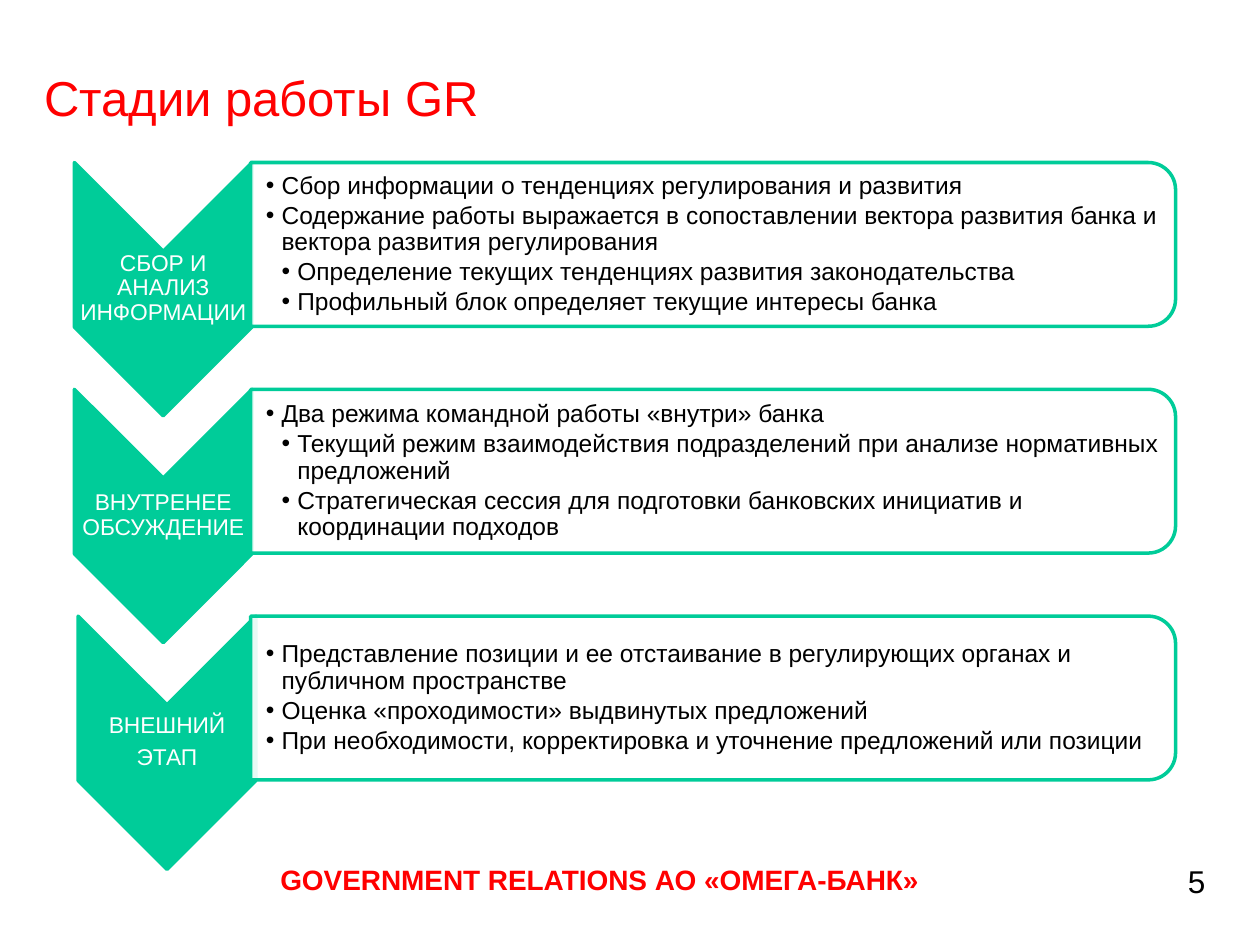
"""Build the slide on the stages of government relations work."""
from dataclasses import dataclass

import lxml.etree
import pptx
import pptx.dml.color
import pptx.enum.shapes
import pptx.enum.text
import pptx.oxml.ns
import pptx.util

Inches = pptx.util.Inches
Align = pptx.enum.text.PP_ALIGN
Anchor = pptx.enum.text.MSO_ANCHOR
Preset = pptx.enum.shapes.MSO_SHAPE


@dataclass(frozen=True)
class Theme:
    """Colours, font and type sizes of the slide."""

    font: str = "Arial"
    accent: str = "00CC99"
    heading: str = "FF0000"
    ink: str = "000000"
    paper: str = "FFFFFF"
    title_size: int = 28
    number_size: int = 18
    footer_size: int = 16
    list_size: int = 14
    label_size: int = 13


@dataclass(frozen=True)
class Item:
    """One list entry with its outline level."""

    text: str
    level: int = 1


@dataclass(frozen=True)
class Stage:
    """One stage: chevron label, list entries and chevron offset."""

    label: tuple[str, ...]
    items: tuple[Item, ...]
    shift: float = 0


THEME = Theme()
FIRST_TOP, STAGE_PITCH = 1.29, 1.8
CHEVRON_LEFT, CHEVRON_WIDTH, CHEVRON_HEIGHT = 0.59, 1.41, 2.01
PANEL_LEFT, PANEL_WIDTH, PANEL_HEIGHT = 1.99, 7.34, 1.3
INDENT = 0.125

STAGES = (
    Stage(
        ("СБОР И АНАЛИЗ ИНФОРМАЦИИ",),
        (
            Item("Сбор информации о тенденциях регулирования и развития"),
            Item("Содержание работы выражается в сопоставлении вектора развития банка и вектора развития регулирования"),
            Item("Определение текущих тенденциях развития законодательства", 2),
            Item("Профильный блок определяет текущие интересы банка", 2),
        ),
    ),
    Stage(
        ("ВНУТРЕНЕЕ ОБСУЖДЕНИЕ",),
        (
            Item("Два режима командной работы «внутри» банка"),
            Item("Текущий режим взаимодействия подразделений при анализе нормативных предложений", 2),
            Item("Стратегическая сессия для подготовки банковских инициатив и координации подходов", 2),
        ),
    ),
    Stage(
        ("ВНЕШНИЙ", "ЭТАП"),
        (
            Item("Представление позиции и ее отстаивание в регулирующих органах и публичном пространстве"),
            Item("Оценка «проходимости» выдвинутых предложений"),
            Item("При необходимости, корректировка и уточнение предложений или позиции"),
        ),
        shift=0.03,
    ),
)


def rgb(value: str) -> pptx.dml.color.RGBColor:
    """Turn a hex string into a colour."""
    return pptx.dml.color.RGBColor.from_string(value)


def set_bullet(para, level: int, colour: str) -> None:
    """Give a paragraph a hanging bullet, or none at level zero."""
    props = para._p.get_or_add_pPr()
    props.set("marL", str(Inches(INDENT * level)))
    props.set("indent", str(-Inches(INDENT) if level else 0))
    name = pptx.oxml.ns.qn
    if not level:
        lxml.etree.SubElement(props, name("a:buNone"))
        return
    para.level = level
    tint = lxml.etree.SubElement(props, name("a:buClr"))
    lxml.etree.SubElement(tint, name("a:srgbClr"), val=colour)
    lxml.etree.SubElement(props, name("a:buFont"), typeface=THEME.font)
    lxml.etree.SubElement(props, name("a:buChar"), char="•")


def write(box, items, *, size: int, colour: str, bold: bool = False,
          align=Align.LEFT, anchor=Anchor.MIDDLE, spacing: float = 0.9,
          after: float = 0, insets=(0.01, 0.01, 0.01, 0.01), wrap: bool = True) -> None:
    """Fill a box with formatted paragraphs."""
    frame = box.text_frame
    frame.auto_size = pptx.enum.text.MSO_AUTO_SIZE.NONE
    frame.word_wrap = wrap
    frame.vertical_anchor = anchor
    (frame.margin_left, frame.margin_top,
     frame.margin_right, frame.margin_bottom) = map(Inches, insets)
    for index, item in enumerate(items):
        para = frame.add_paragraph() if index else frame.paragraphs[0]
        para.alignment = align
        para.line_spacing = spacing
        para.space_before = pptx.util.Pt(0)
        para.space_after = pptx.util.Pt(after)
        set_bullet(para, item.level, colour)
        span = para.add_run()
        span.text = item.text
        span.font.name = THEME.font
        span.font.size = pptx.util.Pt(size)
        span.font.bold = bold
        span.font.color.rgb = rgb(colour)


def place(box, left: float, top: float, width: float, height: float) -> None:
    """Move a placeholder and bring it to the front."""
    box.left, box.top, box.width, box.height = map(Inches, (left, top, width, height))
    box.element.getparent().append(box.element)


def add_turned(page, preset, left: float, top: float, width: float,
               height: float, fill: str):
    """Add a shape turned a quarter, given its visible bounds."""
    shape = page.shapes.add_shape(
        preset, Inches(left + (width - height) / 2),
        Inches(top + (height - width) / 2), Inches(height), Inches(width))
    shape.rotation = 90
    shape.shadow.inherit = False
    shape.fill.solid()
    shape.fill.fore_color.rgb = rgb(fill)
    shape.line.color.rgb = rgb(THEME.accent)
    shape.line.width = pptx.util.Pt(2)
    return shape


def add_stage(page, stage: Stage, top: float, body) -> None:
    """Draw one chevron with its label, panel and list."""
    left = CHEVRON_LEFT + stage.shift
    add_turned(page, Preset.CHEVRON, left, top, CHEVRON_WIDTH, CHEVRON_HEIGHT, THEME.accent)
    label = page.shapes.add_textbox(*map(Inches, (left, top + 0.7, CHEVRON_WIDTH, 0.6)))
    write(label, [Item(line, 0) for line in stage.label], size=THEME.label_size,
          colour=THEME.paper, align=Align.CENTER, after=4.5)
    panel = add_turned(page, Preset.ROUND_2_SAME_RECTANGLE, PANEL_LEFT, top,
                       PANEL_WIDTH, PANEL_HEIGHT, THEME.paper)
    tint = panel.element.spPr.find(
        pptx.oxml.ns.qn("a:solidFill")).find(pptx.oxml.ns.qn("a:srgbClr"))
    lxml.etree.SubElement(tint, pptx.oxml.ns.qn("a:alpha"), val="90000")
    place(body, 2, top + 0.06, 7.27, 1.18)
    write(body, stage.items, size=THEME.list_size, colour=THEME.ink, after=2,
          insets=(0.11, 0.01, 0.01, 0.01))


def main() -> None:
    """Build and save the deck."""
    deck = pptx.Presentation()
    deck.slide_width, deck.slide_height = Inches(10), Inches(7.5)
    page = deck.slides.add_slide(deck.slide_layouts.get_by_name("Comparison"))
    title, footer, *bodies = page.placeholders
    for index, (stage, body) in enumerate(zip(STAGES, bodies)):
        add_stage(page, stage, FIRST_TOP + index * STAGE_PITCH, body)
    place(title, 0.35, 0.52, 6.38, 0.55)
    write(title, [Item("Стадии работы GR", 0)], size=THEME.title_size,
          colour=THEME.heading, spacing=0.93, insets=(0, 0, 0, 0))
    margins = {"spacing": 0.93, "anchor": Anchor.TOP, "insets": (0.1, 0.05, 0.1, 0.05)}
    number = page.shapes.add_textbox(*map(Inches, (9.33, 6.82, 0.34, 0.38)))
    write(number, [Item("5", 0)], size=THEME.number_size, colour=THEME.ink,
          wrap=False, **margins)
    place(footer, 0.27, 6.82, 8.98, 0.35)
    write(footer, [Item("GOVERNMENT RELATIONS АО «ОМЕГА-БАНК»", 0)], size=THEME.footer_size,
          colour=THEME.heading, bold=True, align=Align.CENTER, **margins)
    deck.save("out.pptx")


if __name__ == "__main__":
    main()
